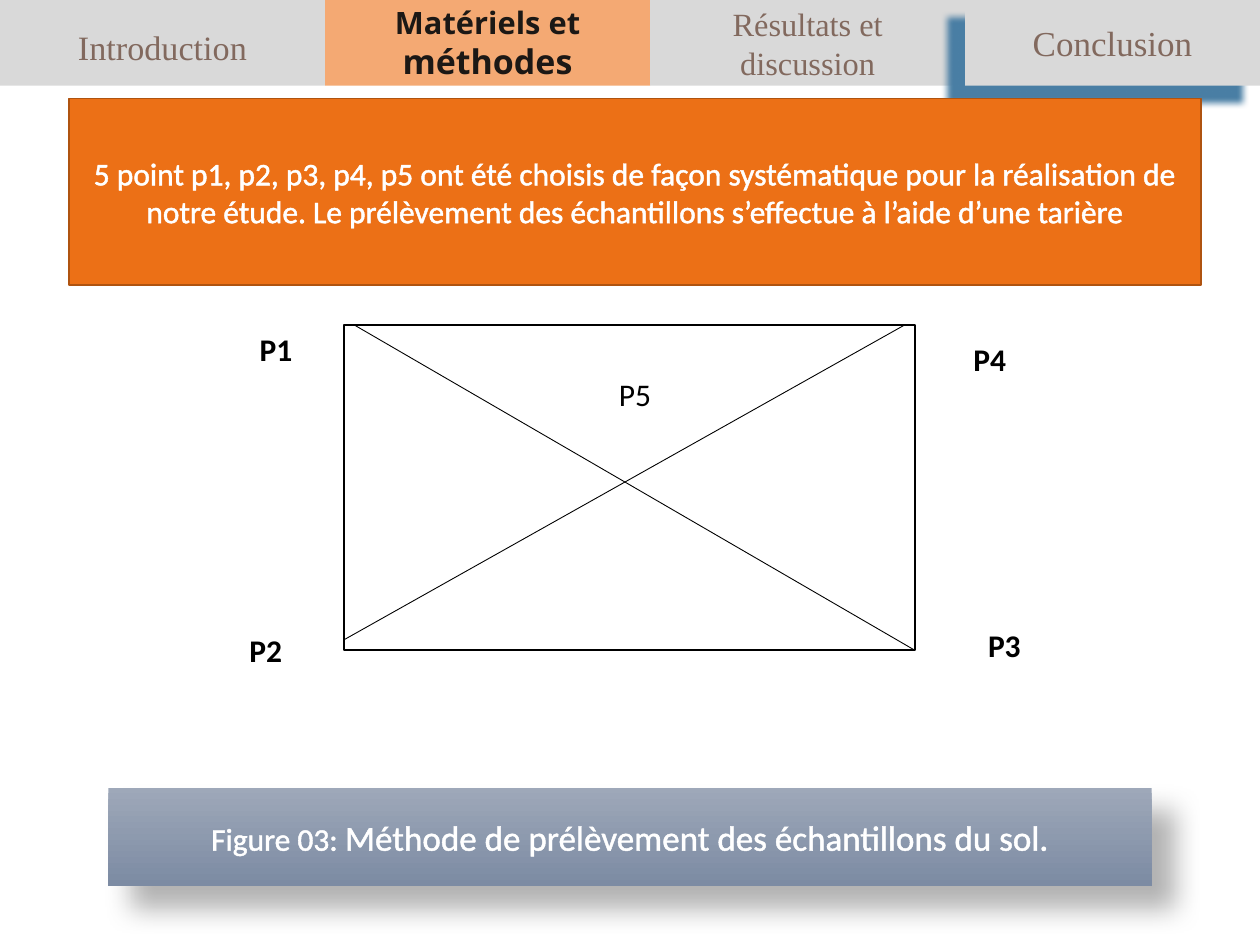
from lxml.etree import SubElement
from pptx import Presentation
from pptx.dml.color import RGBColor
from pptx.enum.shapes import MSO_CONNECTOR, MSO_SHAPE
from pptx.enum.text import MSO_ANCHOR, PP_ALIGN
from pptx.oxml.ns import qn
from pptx.util import Pt

COLORS = {
    "white": "FFFFFF",
    "black": "000000",
    "tab": "D9D9D9",
    "active_tab": "F4A973",
    "tab_text": "82695E",
    "active_text": "1C1815",
    "orange": "EC7016",
    "orange_line": "AF5310",
    "caption_top": "9EA8B9",
    "caption_bottom": "7C8BA3",
    "blue_shadow": "4A7FA5",
}


def rgb(name):
    return RGBColor.from_string(COLORS[name])


def add_color(parent, name, alpha=None):
    color = SubElement(parent, qn("a:srgbClr"), val=COLORS[name])
    if alpha is not None:
        SubElement(color, qn("a:alpha"), val=str(alpha * 1000))


def add_box(slide, left, top, width, height, fill=None, line=None, line_width=1):
    shape = slide.shapes.add_shape(
        MSO_SHAPE.RECTANGLE, Pt(left), Pt(top), Pt(width), Pt(height))
    shape.shadow.inherit = False
    if fill:
        shape.fill.solid()
        shape.fill.fore_color.rgb = rgb(fill)
    if line:
        shape.line.color.rgb = rgb(line)
        shape.line.width = Pt(line_width)
    else:
        shape.line.fill.background()
    return shape


def add_shadow(shape, color, alpha, blur, distance, angle):
    effects = shape._element.spPr.find(qn("a:effectLst"))
    shadow = SubElement(
        effects, qn("a:outerShdw"), blurRad=str(Pt(blur)), dist=str(Pt(distance)),
        dir=str(angle * 60000), algn="ctr", rotWithShape="0")
    add_color(shadow, color, alpha)


def add_line(slide, start, end):
    line = slide.shapes.add_connector(
        MSO_CONNECTOR.STRAIGHT, *(Pt(value) for value in start + end))
    line.line.color.rgb = rgb("black")
    line.line.width = Pt(0.5)
    SubElement(line._element.spPr, qn("a:effectLst"))


def add_text(shape, text, size=18, font="Calibri", color="black", bold=False,
             outline=None, spacing=None, anchor=MSO_ANCHOR.MIDDLE, margin=7.2):
    frame = shape.text_frame
    frame.word_wrap = True
    frame.vertical_anchor = anchor
    frame.margin_left = frame.margin_right = Pt(margin)
    paragraph = frame.paragraphs[0]
    paragraph.alignment = PP_ALIGN.CENTER
    if spacing:
        paragraph.line_spacing = spacing
    run = paragraph.add_run()
    run.text = text
    run.font.size = Pt(size)
    run.font.name = font
    run.font.bold = bold
    if outline:
        properties = run.font._element
        line = SubElement(properties, qn("a:ln"), w=str(Pt(outline)))
        add_color(SubElement(line, qn("a:solidFill")), "white")
        properties.insert(0, line)
    run.font.color.rgb = rgb(color)


def add_tabs(slide):
    edges = (0, 185.8, 371.5, 551.5, 720)
    tabs = [add_box(slide, left, 0, right - left, 49, fill)
            for left, right, fill in zip(
                edges, edges[1:], ("tab", "active_tab", "tab", "tab"))]
    introduction, methods, results, conclusion = tabs
    plain = dict(font="Times New Roman", color="tab_text", margin=10)
    active = dict(font="Open Sans", color="active_text", bold=True)
    add_text(introduction, "Introduction", size=19.5, spacing=1.5,
             anchor=MSO_ANCHOR.TOP, **plain)
    add_text(methods, "Matériels et ", size=17.6, **active)
    add_text(methods, "méthodes", size=19.4, **active)
    add_text(results, "Résultats et discussion", size=18.5, **plain)
    add_text(conclusion, "Conclusion", size=20, **plain)
    add_shadow(conclusion, "blue_shadow", 100, 4, 14, 135)


def add_sampling_plan(slide):
    add_box(slide, 44.6, 180, 641.5, 253.4, "white", "white", 0.75)
    left, top, width, height = 196.6, 185.8, 326.2, 185.8
    right, bottom = left + width, top + height
    add_box(slide, left, top, width, height, "white", "black")
    add_line(slide, (left + 6, top), (right, bottom))
    add_line(slide, (right - 6, top), (left, bottom - 6))
    corners = (
        ("P2", 123.8, 348.5, 56.2, 45.4),
        ("P1", 129.6, 174.2, 56.2, 50.4),
        ("P4", 545.8, 180, 39.6, 50.4),
        ("P3", 545.8, 343.4, 56.2, 50.4),
    )
    for label, *place in corners:
        add_text(add_box(slide, *place, "white", "white"), label,
                 bold=True, outline=0.75)
    add_text(add_box(slide, 337.7, 202.3, 50.4, 45.4, "white", "white"), "P5")


def add_caption(slide):
    caption = add_box(slide, 61.9, 450, 596.2, 56.2)
    caption.fill.gradient()
    caption.fill.gradient_angle = 270
    for stop, color in zip(caption.fill.gradient_stops,
                           ("caption_top", "caption_bottom")):
        stop.color.rgb = rgb(color)
    add_shadow(caption, "black", 30, 15, 18, 45)
    add_text(caption, "Figure 03: ", color="white", outline=1.45)
    add_text(caption, "Méthode de prélèvement des échantillons du sol.",
             size=20, color="white", outline=1.45)


def add_statement(slide):
    statement = add_box(slide, 39.6, 56.2, 646.6, 106.6, "orange", "orange_line")
    add_text(
        statement,
        "5 point p1, p2, p3, p4, p5 ont été choisis de façon systématique pour la "
        "réalisation de notre étude. Le prélèvement des échantillons s’effectue à "
        "l’aide d’une tarière",
        color="white", outline=1.45)


def main():
    presentation = Presentation()
    presentation.slide_width, presentation.slide_height = Pt(720), Pt(540)
    slide = presentation.slides.add_slide(presentation.slide_layouts[6])
    add_tabs(slide)
    add_sampling_plan(slide)
    add_caption(slide)
    add_statement(slide)
    presentation.save("out.pptx")


if __name__ == "__main__":
    main()
